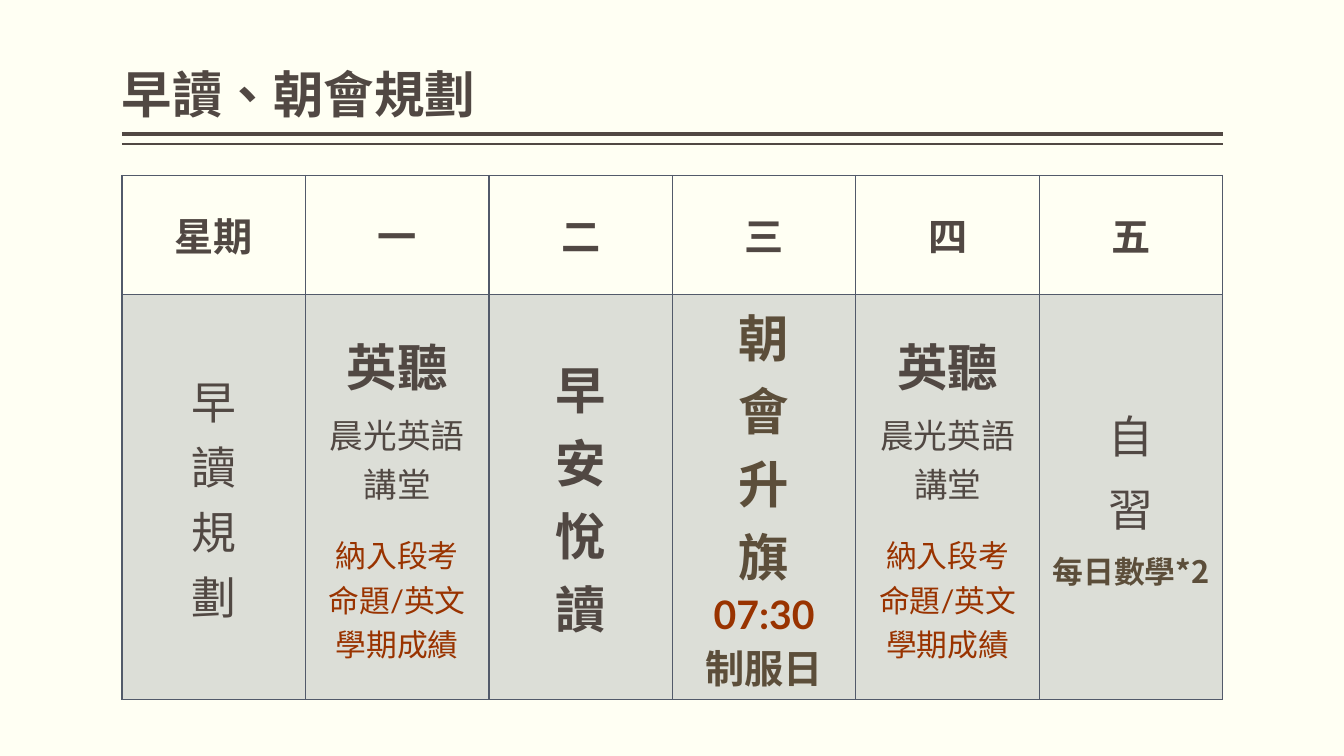
from dataclasses import dataclass

from lxml.etree import SubElement
from pptx import Presentation
from pptx.dml.color import RGBColor
from pptx.enum.shapes import MSO_CONNECTOR
from pptx.enum.text import MSO_ANCHOR, MSO_AUTO_SIZE, PP_ALIGN
from pptx.oxml.ns import qn
from pptx.util import Inches, Pt

# Content: each day has a heading and paragraphs of (text, style name)
TITLE = "早讀、朝會規劃"
LISTENING = [
    ("英聽", "subject"),
    ("晨光英語講堂", "program"),
    ("納入段考\v命題/英文學期成績", "grading"),
]
SCHEDULE = [
    ("星期", [(character, "label") for character in "早讀規劃"]),
    ("一", LISTENING),
    ("二", [(character, "reading") for character in "早安悅讀"]),
    ("三", [(character, "assembly") for character in "朝會升旗"]
     + [("07:30", "time"), ("制服日", "uniform")]),
    ("四", LISTENING),
    ("五", [("自", "study"), ("習", "study"), ("每日數學*2", "practice")]),
]


@dataclass
class Style:
    size: int
    color: str
    bold: bool = False
    before: int = 0
    latin: str = "Lato"
    asian: str = "Noto Sans CJK TC"


class Theme:
    background = "FFFFF3"
    ink = "514843"
    brown = "5C4E3A"
    red = "993300"
    slate = "525A6A"
    tint_percent = 20
    language = "zh-TW"
    simplified = "Noto Sans CJK SC"
    traditional = "Noto Sans CJK TC"
    styles = {
        "title": Style(36, ink, True, latin=traditional),
        "heading": Style(28, ink, True, 6),
        "label": Style(32, ink),
        "subject": Style(36, ink, True, 6),
        "program": Style(24, ink, False, 6),
        "grading": Style(22, red, False, 18),
        "reading": Style(36, ink, True),
        "assembly": Style(36, brown, True),
        "time": Style(28, red, True),
        "uniform": Style(28, brown, True, 0, simplified, simplified),
        "study": Style(32, ink, False, 6),
        "practice": Style(22, brown, True, 6, simplified, simplified),
    }


# Layout in inches
SLIDE_WIDTH, SLIDE_HEIGHT = 13.33, 7.5
LEFT, WIDTH = 1.21, 10.92
TITLE_TOP, TITLE_HEIGHT = 0.08, 1.2
RULES = [(1.33, 3), (1.43, 1)]  # position, weight in points
TABLE_TOP = 1.74
ROW_HEIGHTS = [1.18, 3.94]


def format_paragraph(paragraph, style_name):
    style = Theme.styles[style_name]
    paragraph.space_before = Pt(style.before)
    font = paragraph.font
    font.size, font.bold, font.name = Pt(style.size), style.bold, style.latin
    font.color.rgb = RGBColor.from_string(style.color)
    font._element.set("lang", Theme.language)
    SubElement(font._element, qn("a:ea"), typeface=style.asian)


def add_borders(cell):
    properties = cell._tc.get_or_add_tcPr()
    for side in ("lnL", "lnR", "lnT", "lnB"):
        border = SubElement(properties, qn(f"a:{side}"), w=str(Pt(1)))
        fill = SubElement(border, qn("a:solidFill"))
        SubElement(fill, qn("a:srgbClr"), val=Theme.slate)


def fill_cell(cell, paragraphs):
    cell.vertical_anchor = MSO_ANCHOR.MIDDLE
    add_borders(cell)
    frame = cell.text_frame
    for index, (text, style_name) in enumerate(paragraphs):
        paragraph = frame.add_paragraph() if index else frame.paragraphs[0]
        paragraph.text = text
        paragraph.alignment = PP_ALIGN.CENTER
        format_paragraph(paragraph, style_name)


def tint_cell(cell):
    cell.fill.solid()
    cell.fill.fore_color.rgb = RGBColor.from_string(Theme.slate)
    color = cell._tc.tcPr.find(qn("a:solidFill")).find(qn("a:srgbClr"))
    SubElement(color, qn("a:alpha"), val=str(Theme.tint_percent * 1000))


def add_title(slide):
    title = slide.shapes.title
    title.left, title.top = Inches(LEFT), Inches(TITLE_TOP)
    title.width, title.height = Inches(WIDTH), Inches(TITLE_HEIGHT)
    frame = title.text_frame
    frame.text = TITLE
    frame.auto_size = MSO_AUTO_SIZE.NONE
    frame.vertical_anchor = MSO_ANCHOR.BOTTOM
    frame.margin_left = frame.margin_right = 0
    frame.paragraphs[0].alignment = PP_ALIGN.LEFT
    format_paragraph(frame.paragraphs[0], "title")


def add_rules(slide):
    for top, weight in RULES:
        rule = slide.shapes.add_connector(
            MSO_CONNECTOR.STRAIGHT, Inches(LEFT), Inches(top),
            Inches(LEFT + WIDTH), Inches(top))
        rule.line.width = Pt(weight)
        rule.line.color.rgb = RGBColor.from_string(Theme.ink)
        SubElement(rule._element.spPr, qn("a:effectLst"))


def add_schedule(slide):
    table = slide.shapes.add_table(
        len(ROW_HEIGHTS), len(SCHEDULE), Inches(LEFT), Inches(TABLE_TOP),
        Inches(WIDTH), Inches(sum(ROW_HEIGHTS))).table
    table.first_row = table.horz_banding = False
    for row, height in zip(table.rows, ROW_HEIGHTS):
        row.height = Inches(height)
    for column, (heading, activities) in enumerate(SCHEDULE):
        heading_cell, activity_cell = table.cell(0, column), table.cell(1, column)
        fill_cell(heading_cell, [(heading, "heading")])
        heading_cell.fill.background()
        fill_cell(activity_cell, activities)
        tint_cell(activity_cell)


def main():
    presentation = Presentation()
    presentation.slide_width = Inches(SLIDE_WIDTH)
    presentation.slide_height = Inches(SLIDE_HEIGHT)
    slide = presentation.slides.add_slide(
        presentation.slide_layouts.get_by_name("Title Only"))
    slide.background.fill.solid()
    slide.background.fill.fore_color.rgb = RGBColor.from_string(Theme.background)
    add_title(slide)
    add_rules(slide)
    add_schedule(slide)
    presentation.save("out.pptx")


if __name__ == "__main__":
    main()
